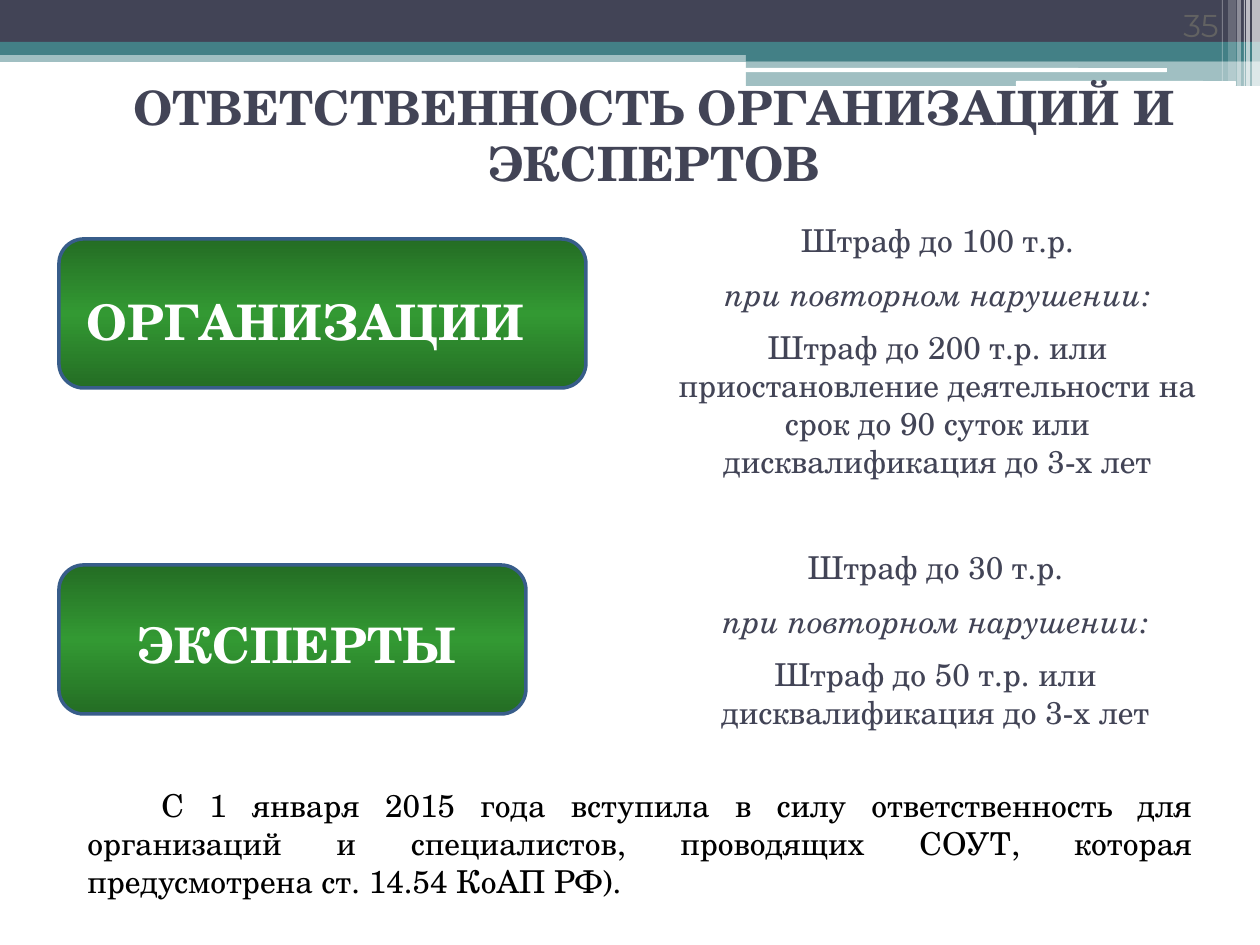
from lxml import etree
from pptx import Presentation
from pptx import util as u
from pptx.dml.color import RGBColor
from pptx.enum import shapes, text
from pptx.oxml import ns

PX = 914400 / 126
SLATE = RGBColor(0x42, 0x44, 0x56)
TEAL = RGBColor(0x43, 0x80, 0x86)
GREY = RGBColor(0x62, 0x62, 0x62)
DARK_GREEN = RGBColor(0x24, 0x6D, 0x24)
GREEN = RGBColor(0x33, 0x99, 0x33)
OUTLINE = RGBColor(0x38, 0x5D, 0x8A)
WHITE = RGBColor(0xFF, 0xFF, 0xFF)
BLACK = RGBColor(0, 0, 0)
SERIF = "TeX Gyre Schola"
SANS = "Montserrat"
RECT = shapes.MSO_SHAPE.RECTANGLE
ROUND = shapes.MSO_SHAPE.ROUNDED_RECTANGLE
LEFT, CENTER, RIGHT, JUSTIFY = (text.PP_ALIGN.LEFT, text.PP_ALIGN.CENTER,
                                text.PP_ALIGN.RIGHT, text.PP_ALIGN.JUSTIFY)

# left, top, width, height, preset, colour, opacity in percent
HEADER_BARS = [
    (0, 50, 1260, 12, RECT, TEAL, 50),
    (0, 0, 1260, 43, RECT, SLATE, 100),
    (0, 42, 1260, 13, RECT, TEAL, 100),
    (746, 49, 514, 12, RECT, TEAL, 100),
    (746, 61, 514, 25, RECT, TEAL, 50),
    (745, 68, 422, 4, ROUND, WHITE, 100),
    (1016, 81, 220, 5, ROUND, WHITE, 100),
]
# left, width, height, opacity in percent
EDGE_STRIPES = [
    (1252, 8, 86, 65), (1246, 4, 86, 65), (1244, 1, 86, 60),
    (1237, 4, 86, 40), (1228, 8, 81, 20), (1222, 1, 81, 30),
]
REPEATED = "при повторном нарушении:"


def px(value):
    return u.Emu(round(value * PX))


def add_bar(slide, left, top, width, height, preset, colour, opacity):
    bar = slide.shapes.add_shape(preset, px(left), px(top), px(width), px(height))
    bar.shadow.inherit = False
    bar.line.fill.background()
    bar.fill.solid()
    bar.fill.fore_color.rgb = colour
    if opacity < 100:
        colour_element = bar._element.spPr.find(ns.qn("a:solidFill"))[0]
        etree.SubElement(colour_element, ns.qn("a:alpha"), val=str(opacity * 1000))


def add_header(slide):
    for bar in HEADER_BARS:
        add_bar(slide, *bar)
    for left, width, height, opacity in EDGE_STRIPES:
        add_bar(slide, left, 0, width, height, RECT, WHITE, opacity)


def fill_vertical_gradient(shape, colours):
    """Spread any number of colours evenly from top to bottom."""
    shape.fill.gradient()
    shape.fill.gradient_angle = 270
    stops = shape._element.spPr.find(ns.qn("a:gradFill")).find(ns.qn("a:gsLst"))
    for stop in list(stops):
        stops.remove(stop)
    for index, colour in enumerate(colours):
        position = 100000 * index // (len(colours) - 1)
        stop = etree.SubElement(stops, ns.qn("a:gs"), pos=str(position))
        etree.SubElement(stop, ns.qn("a:srgbClr"), val=str(colour))


def add_green_panel(slide, top, width):
    panel = slide.shapes.add_shape(ROUND, px(59), px(top), px(width), px(149))
    panel.shadow.inherit = False
    fill_vertical_gradient(panel, [DARK_GREEN, GREEN, DARK_GREEN])
    panel.line.color.rgb = OUTLINE
    panel.line.width = u.Pt(2)


def add_run(paragraph, words, size, colour, font=SERIF, bold=False, italic=False):
    run = paragraph.add_run()
    run.text = words
    run.font.name = font
    run.font.size = u.Pt(size)
    run.font.bold = bold
    run.font.italic = italic
    run.font.color.rgb = colour


def add_text_box(slide, left, top, width, height, align):
    """Return the text frame of a new wrapping box."""
    frame = slide.shapes.add_textbox(px(left), px(top), px(width), px(height)).text_frame
    frame.word_wrap = True
    frame.paragraphs[0].alignment = align
    return frame


def add_label(slide, left, top, width, height, words, align):
    frame = add_text_box(slide, left, top, width, height, align)
    add_run(frame.paragraphs[0], words, 28, WHITE, bold=True)


def add_penalties(slide, left, top, height, first, repeated):
    frame = add_text_box(slide, left, top, 595, height, CENTER)
    add_run(frame.paragraphs[0], first, 18, SLATE)
    for words in (REPEATED, repeated):
        paragraph = frame.add_paragraph()
        paragraph.alignment = CENTER
        paragraph.space_before = u.Pt(9)
        add_run(paragraph, words, 18, SLATE, italic=words == REPEATED)


def add_page_number(slide, number):
    frame = add_text_box(slide, 1126, 0, 105, 50, RIGHT)
    frame.vertical_anchor = text.MSO_ANCHOR.BOTTOM
    add_run(frame.paragraphs[0], number, 18, GREY, font=SANS)


def set_title(slide, words):
    """Format the title and bring it in front of the header."""
    title = slide.shapes.title
    title.left, title.top, title.width, title.height = px(74), px(86), px(1160), px(97)
    slide.shapes._spTree.append(title._element)
    frame = title.text_frame
    frame.word_wrap = True
    frame.auto_size = text.MSO_AUTO_SIZE.NONE
    frame.vertical_anchor = text.MSO_ANCHOR.MIDDLE
    frame.paragraphs[0].alignment = CENTER
    add_run(frame.paragraphs[0], words, 27, SLATE, bold=True)


def add_note(slide, words):
    paragraph = add_text_box(slide, 74, 780, 1131, 127, JUSTIFY).paragraphs[0]
    properties = paragraph._p.get_or_add_pPr()
    properties.set("marL", str(px(1)))
    properties.set("indent", str(px(74)))
    add_run(paragraph, words, 18, BLACK)


def main():
    presentation = Presentation()
    presentation.slide_width, presentation.slide_height = px(1260), px(945)
    slide = presentation.slides.add_slide(presentation.slide_layouts[5])
    add_header(slide)
    add_page_number(slide, "35")
    set_title(slide, "ОТВЕТСТВЕННОСТЬ ОРГАНИЗАЦИЙ И ЭКСПЕРТОВ")

    add_penalties(slide, 640, 215, 277, "Штраф до 100 т.р.",
                  "Штраф до 200 т.р. или приостановление деятельности на "
                  "срок до 90 суток или дисквалификация до 3-х лет")
    add_green_panel(slide, 239, 527)
    add_label(slide, 74, 285, 486, 72, "ОРГАНИЗАЦИИ", LEFT)

    add_green_panel(slide, 565, 467)
    add_label(slide, 88, 608, 417, 72, "ЭКСПЕРТЫ", CENTER)
    add_penalties(slide, 638, 542, 202, "Штраф до 30 т.р.",
                  "Штраф до 50 т.р. или дисквалификация до 3-х лет")

    add_note(slide, "С 1 января 2015 года вступила в силу ответственность для "
                    "организаций и специалистов, проводящих СОУТ, которая "
                    "предусмотрена ст. 14.54 КоАП РФ).")
    presentation.save("out.pptx")


if __name__ == "__main__":
    main()
